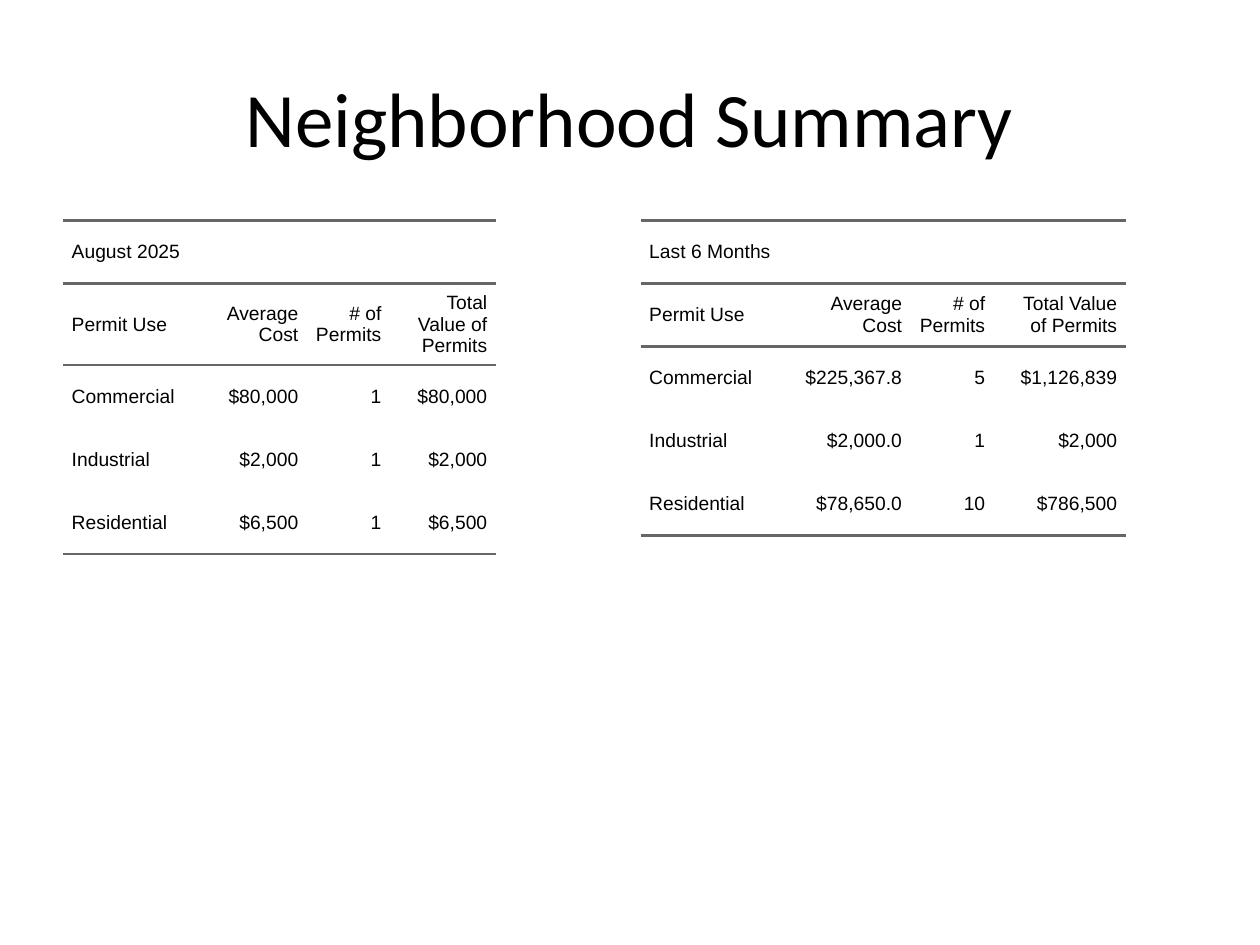
import lxml.etree
import pptx
import pptx.dml.color
import pptx.enum.text
import pptx.oxml.ns
import pptx.util

Pt = pptx.util.Pt
BLACK = pptx.dml.color.RGBColor(0x00, 0x00, 0x00)
GRAY = pptx.dml.color.RGBColor(0x66, 0x66, 0x66)
ALIGN = pptx.enum.text.PP_ALIGN
MIDDLE = pptx.enum.text.MSO_ANCHOR.MIDDLE
PLAIN = "{2D5ABB26-0587-4C30-8999-92F81FD0307C}"
HEADS = ["Permit Use", "Average Cost", "# of Permits", "Total Value of Permits"]
qn = pptx.oxml.ns.qn


class Board:
    def __init__(self, slide):
        self.slide = slide
        self.pad = Pt(5)
        self.rule = Pt(1.5)
        self.high = Pt(36)

    def style(self, para, font, size, align):
        para.alignment = align
        for run in para.runs:
            run.font.name = font
            run.font.size = Pt(size)
            run.font.color.rgb = BLACK

    def title(self, text, left, top, width, height):
        box = self.slide.shapes.add_textbox(Pt(left), Pt(top), Pt(width), Pt(height))
        frame = box.text_frame
        frame.word_wrap = True
        frame.vertical_anchor = MIDDLE
        frame.text = text
        self.style(frame.paragraphs[0], "Calibri", 44, ALIGN.CENTER)

    def border(self, cell, side):
        props = cell._tc.get_or_add_tcPr()
        line = lxml.etree.SubElement(props, qn("a:ln" + side), w=str(self.rule))
        fill = lxml.etree.SubElement(line, qn("a:solidFill"))
        lxml.etree.SubElement(fill, qn("a:srgbClr"), val=str(GRAY))

    def cell(self, cell, text, align, sides):
        cell.margin_left = cell.margin_right = 0
        cell.margin_top = cell.margin_bottom = self.pad
        cell.vertical_anchor = MIDDLE
        for side in sides:
            self.border(cell, side)
        cell.fill.background()
        cell.text_frame.text = text
        para = cell.text_frame.paragraphs[0]
        para.space_before = para.space_after = self.pad
        props = para._p.get_or_add_pPr()
        for edge in ("marL", "marR"):
            props.set(edge, str(self.pad))
        self.style(para, "Arial", 11, align)

    def table(self, name, data, left, top, widths):
        rows = [[name, "", "", ""], HEADS] + data
        last = len(rows) - 1
        frame = self.slide.shapes.add_table(
            len(rows), len(widths), Pt(left), Pt(top),
            Pt(sum(widths)), self.high * len(rows))
        table = frame.table
        table.first_row = table.horz_banding = False
        table._tbl.tblPr.find(qn("a:tableStyleId")).text = PLAIN
        for col, width in zip(table.columns, widths):
            col.width = Pt(width)
        for r, row in enumerate(rows):
            table.rows[r].height = self.high
            sides = "TB" if r < 2 else "B" if r == last else ""
            for c, text in enumerate(row):
                align = ALIGN.RIGHT if c else ALIGN.LEFT
                self.cell(table.cell(r, c), text, align, sides)
        table.cell(0, 0).merge(table.cell(0, len(widths) - 1))


def main():
    deck = pptx.Presentation()
    deck.slide_width, deck.slide_height = Pt(720), Pt(540)
    board = Board(deck.slides.add_slide(deck.slide_layouts[6]))
    board.table("August 2025", [
        ["Commercial", "$80,000", "1", "$80,000"],
        ["Industrial", "$2,000", "1", "$2,000"],
        ["Residential", "$6,500", "1", "$6,500"],
    ], 36, 126, [79, 60.5, 47.5, 60.5])
    board.table("Last 6 Months", [
        ["Commercial", "$225,367.8", "5", "$1,126,839"],
        ["Industrial", "$2,000.0", "1", "$2,000"],
        ["Residential", "$78,650.0", "10", "$786,500"],
    ], 366, 126, [79, 75.5, 47.5, 75.5])
    board.title("Neighborhood Summary", 36, 21.6, 648, 90)
    deck.save("out.pptx")


if __name__ == "__main__":
    main()
